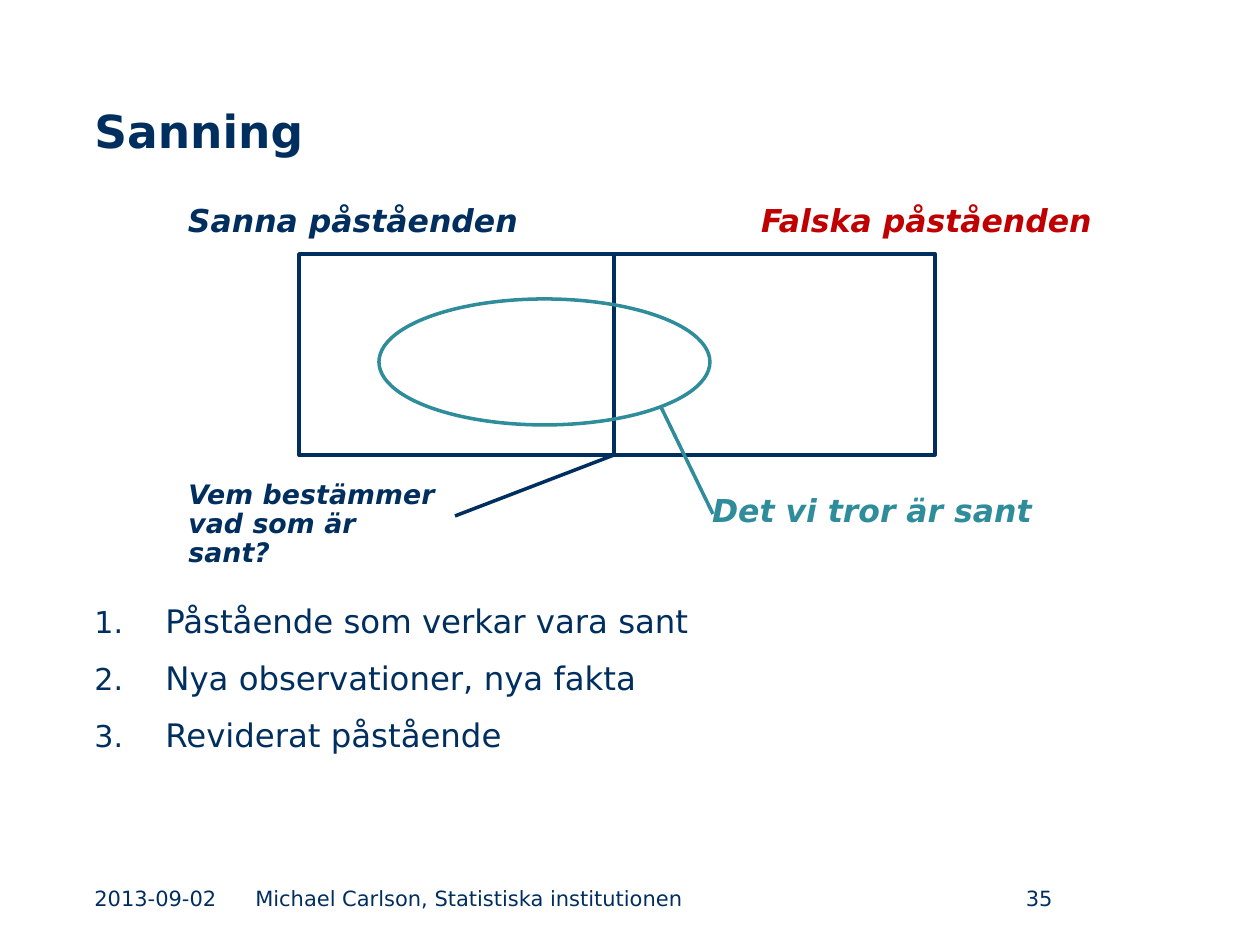
import pptx
import pptx.util
import pptx.dml.color
import pptx.enum.shapes
import pptx.enum.text
import pptx.oxml.ns
from lxml import etree

NAVY = pptx.dml.color.RGBColor(0x00, 0x2F, 0x5F)
TEAL = pptx.dml.color.RGBColor(0x2F, 0x8C, 0x9A)
RED = pptx.dml.color.RGBColor(0xC0, 0x00, 0x00)
FONT = "DejaVu Sans"
PX = 914400 // 126

SHAPE = pptx.enum.shapes.MSO_SHAPE
ALIGN = pptx.enum.text.PP_ALIGN
ANCHOR = pptx.enum.text.MSO_ANCHOR
TOP, MIDDLE, BOTTOM = ANCHOR.TOP, ANCHOR.MIDDLE, ANCHOR.BOTTOM

TITLE = ("Sanning", (82, 54, 1095, 110))
CLAIMS = ["Påstående som verkar vara sant", "Nya observationer, nya fakta", "Reviderat påstående"]
CLAIM_BOX = (82, 583, 1095, 192)
INDENT = 71
LABELS = [
    ("Sanna påståenden", (115, 195, 476, 82), 18, NAVY, ALIGN.CENTER, None),
    ("Falska påståenden", (669, 195, 515, 82), 18, RED, ALIGN.CENTER, None),
    ("Det vi tror är sant", (634, 485, 476, 82), 18, TEAL, ALIGN.CENTER, None),
    ("Vem bestämmer vad som är sant?", (176, 475, 277, 82), 15.3, NAVY, ALIGN.LEFT, 0.9),
]
FOOTER = [
    ("2013-09-02", (82, 879, 155, 39), ALIGN.LEFT, MIDDLE),
    ("Michael Carlson, Statistiska institutionen", (243, 879, 619, 39), ALIGN.LEFT, TOP),
    ("35", (868, 879, 197, 39), ALIGN.RIGHT, MIDDLE),
]
LEFT, SPLIT, RIGHT, UPPER, LOWER = 299, 614, 935, 254, 455
FIGURES = [
    (SHAPE.RECTANGLE, (LEFT, UPPER, SPLIT - LEFT, LOWER - UPPER), NAVY),
    (SHAPE.RECTANGLE, (SPLIT, UPPER, RIGHT - SPLIT, LOWER - UPPER), NAVY),
    (SHAPE.OVAL, (379, 299, 331, 126), TEAL),
]
POINTERS = [
    ((661, 407, 713, 514), TEAL),
    ((SPLIT, LOWER, 455, 516), NAVY),
]

deck = pptx.Presentation()
deck.slide_width, deck.slide_height = 1260 * PX, 945 * PX
slide = deck.slides.add_slide(deck.slide_layouts[6])


def scale(box):
    return [n * PX for n in box]


def add_frame(box, anchor=TOP):
    frame = slide.shapes.add_textbox(*scale(box)).text_frame
    frame.word_wrap = True
    frame.vertical_anchor = anchor
    return frame


def add_run(para, text, size, color=NAVY, bold=False, italic=False):
    run = para.add_run()
    run.text = text
    font = run.font
    font.name, font.size = FONT, pptx.util.Pt(size)
    font.bold, font.italic = bold, italic
    font.color.rgb = color


def number(para):
    props = para._p.get_or_add_pPr()
    props.set("marL", str(INDENT * PX))
    props.set("indent", str(-INDENT * PX))
    for tag, key, val in (("a:buSzPct", "val", "93000"), ("a:buAutoNum", "type", "arabicPeriod")):
        etree.SubElement(props, pptx.oxml.ns.qn(tag)).set(key, val)


text, box = TITLE
add_run(add_frame(box, BOTTOM).paragraphs[0], text, 26, bold=True)

frame = add_frame(CLAIM_BOX)
for i, claim in enumerate(CLAIMS):
    para = frame.add_paragraph() if i else frame.paragraphs[0]
    number(para)
    para.line_spacing = pptx.util.Pt(29)
    if i:
        para.space_before = pptx.util.Pt(3.7)
    add_run(para, claim, 18.5)

for text, box, align, anchor in FOOTER:
    para = add_frame(box, anchor).paragraphs[0]
    para.alignment = align
    add_run(para, text, 12)

for kind, box, color in FIGURES:
    shape = slide.shapes.add_shape(kind, *scale(box))
    shape.shadow.inherit = False
    shape.fill.background()
    shape.line.color.rgb = color
    shape.line.width = pptx.util.Pt(2)

for text, box, size, color, align, spacing in LABELS:
    para = add_frame(box).paragraphs[0]
    para.alignment = align
    if spacing:
        para.line_spacing = spacing
    add_run(para, text, size, color, True, True)

for ends, color in POINTERS:
    line = slide.shapes.add_connector(pptx.enum.shapes.MSO_CONNECTOR.STRAIGHT, *scale(ends))
    line.line.color.rgb = color
    line.line.width = pptx.util.Pt(2)
    etree.SubElement(line._element.spPr, pptx.oxml.ns.qn("a:effectLst"))

deck.save("out.pptx")
